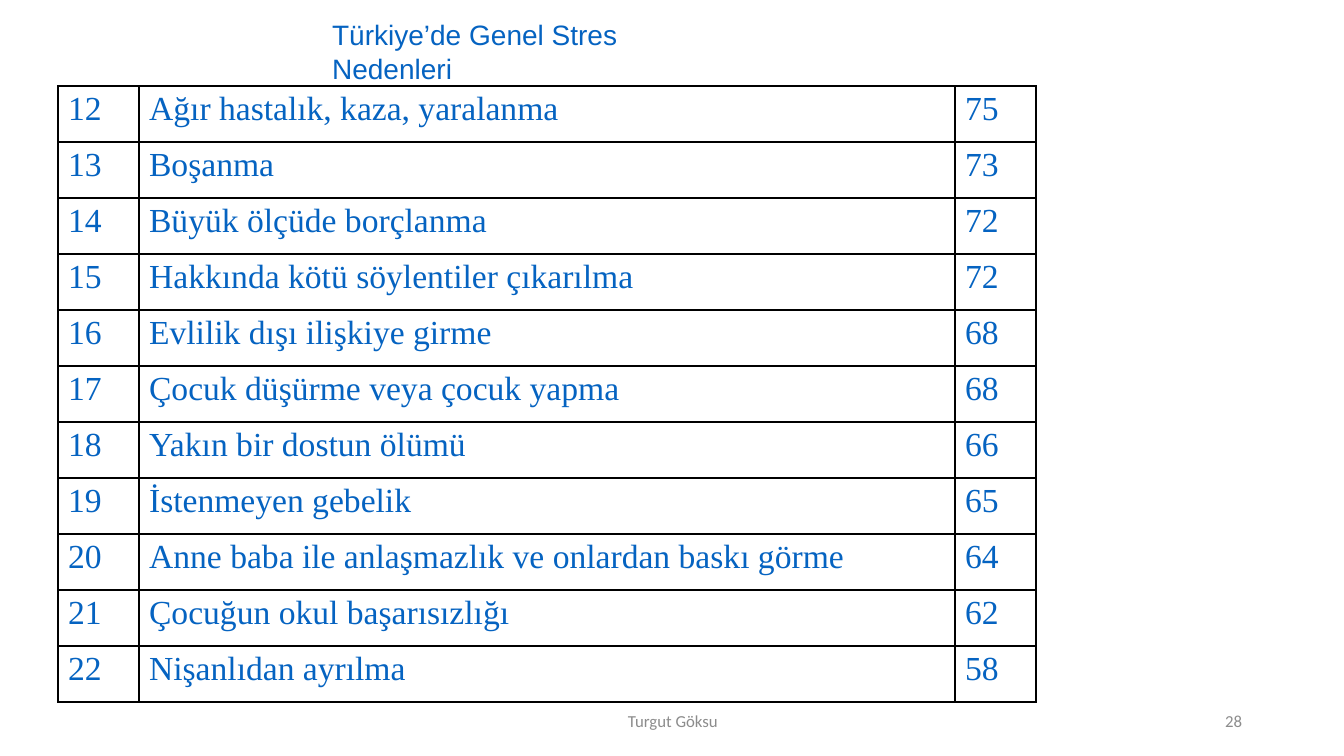
from typing import Any, NamedTuple

import lxml.etree
import pptx
import pptx.dml.color
import pptx.enum.text
import pptx.oxml.ns
import pptx.util

EMU_PER_PX = 12192000 / 1344
BLUE = pptx.dml.color.RGBColor(0x05, 0x63, 0xC1)
GREY = pptx.dml.color.RGBColor(0x8C, 0x8C, 0x8C)
BLACK = pptx.dml.color.RGBColor(0, 0, 0)
Align = pptx.enum.text.PP_ALIGN
Anchor = pptx.enum.text.MSO_ANCHOR


class Box(NamedTuple):
    left: int
    top: int
    width: int
    height: int


class FooterItem(NamedTuple):
    text: str
    box: Box
    align: Any


class Cause(NamedTuple):
    name: str
    score: int


TITLE_BOX = Box(322, 30, 428, 43)
TABLE_BOX = Box(58, 86, 978, 616)
COLUMN_WIDTHS = (81, 816, 81)
FIRST_RANK = 12
CAUSES = (
    Cause("Ağır hastalık, kaza, yaralanma", 75),
    Cause("Boşanma", 73),
    Cause("Büyük ölçüde borçlanma", 72),
    Cause("Hakkında kötü söylentiler çıkarılma", 72),
    Cause("Evlilik dışı ilişkiye girme", 68),
    Cause("Çocuk düşürme veya çocuk yapma", 68),
    Cause("Yakın bir dostun ölümü", 66),
    Cause("İstenmeyen gebelik", 65),
    Cause("Anne baba ile anlaşmazlık ve onlardan baskı görme", 64),
    Cause("Çocuğun okul başarısızlığı", 62),
    Cause("Nişanlıdan ayrılma", 58),
)
FOOTER_ITEMS = (
    FooterItem("Turgut Göksu", Box(446, 701, 454, 40), Align.CENTER),
    FooterItem("28", Box(950, 701, 302, 40), Align.RIGHT),
)


def px(length: int) -> pptx.util.Emu:
    return pptx.util.Emu(round(length * EMU_PER_PX))


def emu_box(box: Box) -> tuple:
    return tuple(px(length) for length in box)


def write_text(text_frame: Any, text: str, *, font: str, size: int,
               color: pptx.dml.color.RGBColor, align: Any = Align.LEFT,
               anchor: Any = Anchor.MIDDLE) -> None:
    text_frame.word_wrap = True
    text_frame.vertical_anchor = anchor
    paragraph = text_frame.paragraphs[0]
    paragraph.alignment = align
    run = paragraph.add_run()
    run.text = text
    run.font.name = font
    run.font.size = pptx.util.Pt(size)
    run.font.color.rgb = color


def add_cell_borders(cell: Any, color: pptx.dml.color.RGBColor, width: int) -> None:
    """Insert the border lines ahead of the fill, as the schema requires."""
    qualified = pptx.oxml.ns.qn
    properties = cell._tc.get_or_add_tcPr()
    for index, side in enumerate(("lnL", "lnR", "lnT", "lnB")):
        line = lxml.etree.Element(qualified(f"a:{side}"), w=str(pptx.util.Pt(width)))
        fill = lxml.etree.SubElement(line, qualified("a:solidFill"))
        lxml.etree.SubElement(fill, qualified("a:srgbClr"), val=str(color))
        properties.insert(index, line)


def add_cause_table(slide: Any) -> None:
    table = slide.shapes.add_table(
        len(CAUSES), len(COLUMN_WIDTHS), *emu_box(TABLE_BOX)).table
    table.first_row = False
    table.horz_banding = False
    for column, width in zip(table.columns, COLUMN_WIDTHS):
        column.width = px(width)
    for row_index, cause in enumerate(CAUSES):
        row = table.rows[row_index]
        row.height = px(TABLE_BOX.height // len(CAUSES))
        values = (FIRST_RANK + row_index, cause.name, cause.score)
        for cell, value in zip(row.cells, values):
            write_text(cell.text_frame, str(value), font="Times New Roman",
                       size=24, color=BLUE, anchor=Anchor.TOP)
            cell.vertical_anchor = Anchor.TOP
            cell.fill.background()
            add_cell_borders(cell, BLACK, 1)


def add_footer_item(slide: Any, item: FooterItem) -> None:
    shape = slide.shapes.add_textbox(*emu_box(item.box))
    write_text(shape.text_frame, item.text, font="Calibri", size=12,
               color=GREY, align=item.align)


def place_title(slide: Any) -> None:
    title = slide.shapes.title
    title.left, title.top, title.width, title.height = emu_box(TITLE_BOX)
    write_text(title.text_frame, "Türkiye’de Genel Stres Nedenleri",
               font="Arial", size=20, color=BLUE)
    title.text_frame.auto_size = pptx.enum.text.MSO_AUTO_SIZE.SHAPE_TO_FIT_TEXT


def main() -> None:
    presentation = pptx.Presentation()
    presentation.slide_width = px(1344)
    presentation.slide_height = px(756)
    title_only_layout = presentation.slide_layouts[5]
    slide = presentation.slides.add_slide(title_only_layout)
    for item in FOOTER_ITEMS:
        add_footer_item(slide, item)
    add_cause_table(slide)
    place_title(slide)
    presentation.save("out.pptx")


if __name__ == "__main__":
    main()
